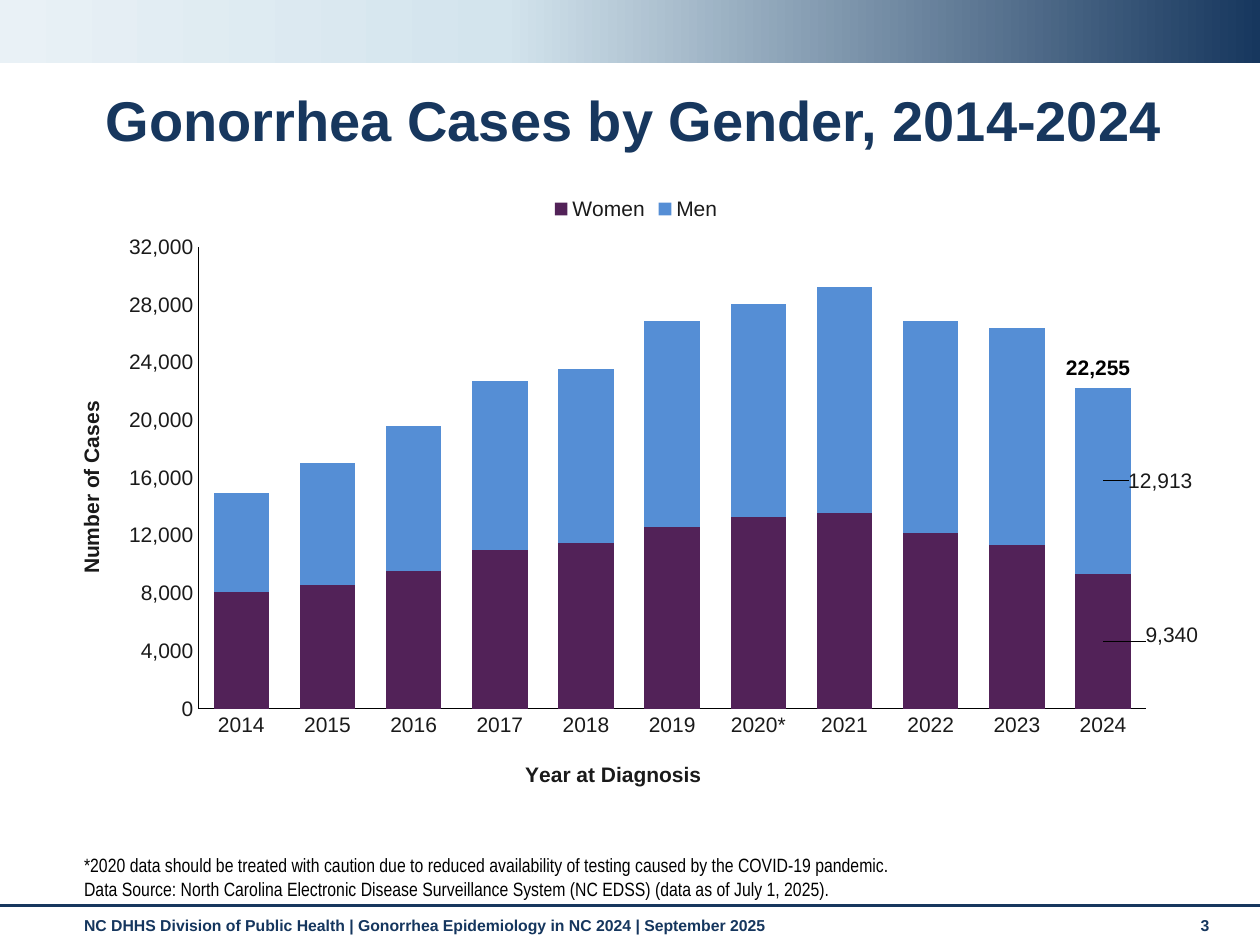
from copy import deepcopy

from lxml import etree
from pptx import Presentation
from pptx.chart.data import CategoryChartData
from pptx.dml.color import RGBColor
from pptx.enum.chart import XL_CHART_TYPE, XL_LABEL_POSITION, XL_LEGEND_POSITION, XL_TICK_MARK
from pptx.enum.shapes import MSO_CONNECTOR, MSO_SHAPE
from pptx.enum.text import MSO_ANCHOR, PP_ALIGN
from pptx.oxml.ns import qn
from pptx.util import Pt

STACKED = XL_CHART_TYPE.COLUMN_STACKED
LABEL_CENTER = XL_LABEL_POSITION.CENTER
LEGEND_TOP = XL_LEGEND_POSITION.TOP
NO_TICK = XL_TICK_MARK.NONE
STRAIGHT = MSO_CONNECTOR.STRAIGHT
RECTANGLE = MSO_SHAPE.RECTANGLE
TOP, MIDDLE, BOTTOM = MSO_ANCHOR.TOP, MSO_ANCHOR.MIDDLE, MSO_ANCHOR.BOTTOM
LEFT, CENTER = PP_ALIGN.LEFT, PP_ALIGN.CENTER

NAVY, PALE_BLUE, ICE = "17375E", "D3E4ED", "E9F1F6"
FOOTER_NAVY, BLACK, CHART_TEXT = "15365E", "000000", "1A1A1A"

YEARS = ["2014", "2015", "2016", "2017", "2018", "2019", "2020*", "2021", "2022", "2023", "2024"]
CASES = {
    "Women": [8079, 8576, 9568, 11033, 11485, 12633, 13263, 13584, 12209, 11380, 9340],
    "Men": [6896, 8475, 10029, 11696, 12051, 14218, 14829, 15640, 14668, 15009, 12913],
}
SERIES_COLORS = {"Women": "522258", "Men": "558ED5"}
LABEL_OFFSETS = {"Women": (0.06, -0.01), "Men": (0.05, 0)}


def color(value):
    return RGBColor.from_string(value)


def add_text(slide, box, text, size=12, font="Arial", fill=BLACK, bold=False,
             align=LEFT, anchor=TOP, spacing=None):
    frame = slide.shapes.add_textbox(*map(Pt, box)).text_frame
    frame.word_wrap = True
    frame.vertical_anchor = anchor
    for index, line in enumerate(text.split("\n")):
        paragraph = frame.add_paragraph() if index else frame.paragraphs[0]
        paragraph.alignment = align
        paragraph.line_spacing = spacing
        run = paragraph.add_run()
        run.text = line
        run.font.name = font
        run.font.size = Pt(size)
        run.font.bold = bold
        run.font.color.rgb = color(fill)


def add_banner(slide, box):
    banner = slide.shapes.add_shape(RECTANGLE, *map(Pt, box))
    banner.shadow.inherit = False
    banner.line.fill.background()
    banner.fill.gradient()
    banner.fill.gradient_angle = 180
    stop_list = banner.fill._fill._gradFill.gsLst
    stop_list.append(deepcopy(stop_list[-1]))
    stops = zip(banner.fill.gradient_stops, (0, 0.6, 1), (NAVY, PALE_BLUE, ICE))
    for stop, position, value in stops:
        stop.position = position
        stop.color.rgb = color(value)


def add_footer(slide, box):
    left, top, width, height = box
    rule = slide.shapes.add_connector(STRAIGHT, Pt(left), Pt(top), Pt(left + width), Pt(top))
    rule.line.color.rgb = color(NAVY)
    rule.line.width = Pt(1.75)
    etree.SubElement(rule._element.spPr, qn("a:effectLst"))
    style = {"size": 9, "fill": FOOTER_NAVY, "bold": True}
    add_text(slide, (left + 41, top + 2, 629, height - 2),
             "NC DHHS Division of Public Health | Gonorrhea Epidemiology in NC 2024 | September 2025",
             **style)
    add_text(slide, (left + 679, top + 2, 32, height - 2), "3", **style)


def make_layout(**values):
    layout = etree.Element(qn("c:layout"))
    manual = etree.SubElement(layout, qn("c:manualLayout"))
    for name, value in values.items():
        etree.SubElement(manual, qn(f"c:{name}")).set("val", str(value))
    return layout


def replace_layout(parent, layout, position):
    for existing in parent.findall(qn("c:layout")):
        parent.remove(existing)
    parent.insert(position, layout)


def style_axis(axis, title, x, y):
    axis.has_major_gridlines = False
    axis.major_tick_mark = NO_TICK
    axis.minor_tick_mark = NO_TICK
    axis.format.line.color.rgb = color(BLACK)
    axis.format.line.width = Pt(0.75)
    axis.has_title = True
    frame = axis.axis_title.text_frame
    frame.text = title
    font = frame.paragraphs[0].runs[0].font
    font.name = "Arial"
    font.size = Pt(12)
    font.bold = True
    font.color.rgb = color(CHART_TEXT)
    replace_layout(axis.axis_title._element, make_layout(xMode="edge", yMode="edge", x=x, y=y), 1)


def style_series(series):
    fill = series.format.fill
    fill.solid()
    fill.fore_color.rgb = color(SERIES_COLORS[series.name])
    label = series.points[len(YEARS) - 1].data_label
    label.position = LABEL_CENTER
    series.data_labels.show_value = False
    series.data_labels.number_format = "#,##0"
    series.data_labels.number_format_is_linked = False
    x, y = LABEL_OFFSETS[series.name]
    label_element = series.data_labels._element.find(qn("c:dLbl"))
    replace_layout(label_element, make_layout(x=x, y=y), 1)


def add_cases_chart(slide, box):
    data = CategoryChartData(number_format="#,##0")
    data.categories = YEARS
    for name, values in CASES.items():
        data.add_series(name, values)
    chart = slide.shapes.add_chart(STACKED, *map(Pt, box), data).chart
    chart.has_title = False
    chart.font.name = "Arial"
    chart.font.size = Pt(12)
    chart.font.color.rgb = color(CHART_TEXT)
    chart.has_legend = True
    chart.legend.position = LEGEND_TOP
    chart.legend.include_in_layout = False

    plot = chart.plots[0]
    plot.gap_width = 55
    plot.overlap = 100
    plot.vary_by_categories = False
    for series in plot.series:
        style_series(series)

    style_axis(chart.category_axis, "Year at Diagnosis", 0.4, 0.94)
    style_axis(chart.value_axis, "Number of Cases", 0.01, 0.35)
    chart.value_axis.minimum_scale = 0
    chart.value_axis.maximum_scale = 32000
    chart.value_axis.major_unit = 4000
    chart.value_axis.tick_labels.number_format = "#,##0"
    chart.value_axis.tick_labels.number_format_is_linked = False
    plot_area = chart._chartSpace.chart.plotArea
    replace_layout(plot_area, make_layout(layoutTarget="inner", xMode="edge", yMode="edge",
                                          x=0.118, y=0.104, w=0.827, h=0.756), 0)

    left, top, width, height = box
    add_text(slide, (left + 559, top + 94, 65, 22), "22,255", bold=True, align=CENTER)


def main():
    presentation = Presentation()
    presentation.slide_width = Pt(720)
    presentation.slide_height = Pt(540)
    slide = presentation.slides.add_slide(presentation.slide_layouts[6])
    add_banner(slide, (0, 0, 720, 36))
    add_footer(slide, (0, 517.7, 720, 22.3))
    add_text(slide, (53.3, 49, 648, 43), "Gonorrhea Cases by Gender, 2014-2024",
             size=32, fill=NAVY, bold=True, anchor=MIDDLE, spacing=0.9)
    add_cases_chart(slide, (36, 105, 655, 349))
    add_text(slide, (41, 491.8, 629, 26),
             "*2020 data should be treated with caution due to reduced availability of testing "
             "caused by the COVID-19 pandemic.\n"
             "Data Source: North Carolina Electronic Disease Surveillance System (NC EDSS) "
             "(data as of July 1, 2025).",
             size=11, font="Arial Narrow", anchor=BOTTOM)
    presentation.save("out.pptx")


if __name__ == "__main__":
    main()
